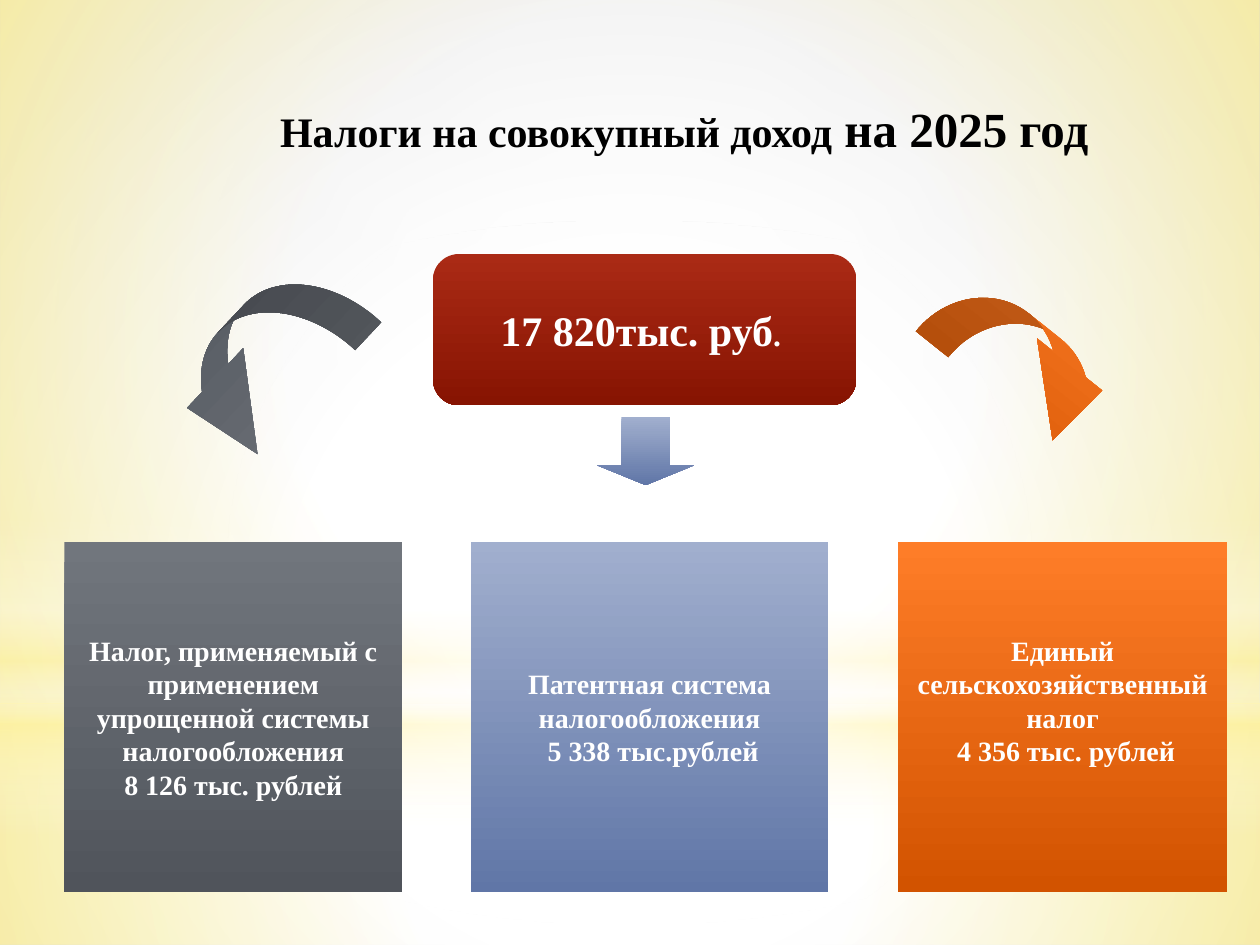
"""Build a slide that splits the total income tax into three special tax regimes."""
from dataclasses import dataclass
from typing import Optional

from lxml import etree
from pptx import Presentation
from pptx import util as u
from pptx.dml.color import RGBColor
from pptx.enum import shapes, text
from pptx.oxml.ns import qn

FONT = "Times New Roman"
WHITE = "FFFFFF"
YELLOW = "FFF39D"
WIDTH, HEIGHT = 720, 540
BOX_TOP, BOX_HEIGHT = 309.6, 200.2
CENTER = (50, 50, 50, 50)
Shape = shapes.MSO_SHAPE


@dataclass(frozen=True)
class Gradient:
    """Colour stops as (position, colour, opacity) in percent, circular if focus is set."""
    stops: tuple
    focus: Optional[tuple] = None


@dataclass(frozen=True)
class Block:
    """A filled preset shape, placed in points."""
    kind: Shape
    left: float
    top: float
    width: float
    height: float
    fill: Gradient
    rotation: float = 0
    adjustments: tuple = ()


@dataclass(frozen=True)
class Regime:
    """A tax regime box with its name and amount."""
    left: float
    width: float
    fill: Gradient
    name: str
    amount: str
    bottom_inset: float = 0


def linear(top: str, bottom: str) -> Gradient:
    """Return an opaque top-to-bottom gradient."""
    return Gradient(((0, top, 100), (100, bottom, 100)))


GREY = linear("71767D", "50545B")
BLUE = linear("A1AFCE", "6076A7")
ORANGE = linear("FE7D28", "D25300")
RED = linear("AA2A15", "871402")
BACKGROUND = Gradient(((0, WHITE, 100), (42, WHITE, 100), (100, "D1D1D1", 100)), (24, 44, 24, 12))

GLOWS = (
    Block(Shape.RECTANGLE, 0, 401.8, WIDTH, 138.2,
          Gradient(((0, WHITE, 91), (37, WHITE, 76), (100, YELLOW, 79)), CENTER)),
    Block(Shape.RECTANGLE, 0, 0, WIDTH, 401.8,
          Gradient(((0, WHITE, 89), (48, WHITE, 62), (100, YELLOW, 79)), CENTER)),
    Block(Shape.RECTANGLE, 0, 296.6, WIDTH, 180,
          Gradient(((0, WHITE, 0), (29, WHITE, 30), (45, YELLOW, 40),
                    (55, WHITE, 26), (65, YELLOW, 60), (100, WHITE, 0)))),
    Block(Shape.OVAL, 0, 126, WIDTH, 401.8,
          Gradient(((0, WHITE, 100), (56, WHITE, 0)), CENTER)),
)
TOTAL = Block(Shape.ROUNDED_RECTANGLE, 247.5, 145.2, 241.8, 86.4, RED, 0, (0.17,))
REGIMES = (
    Regime(36.8, 193, GREY,
           "Налог, применяемый с применением упрощенной системы налогообложения",
           "8 126 тыс. рублей"),
    Regime(269.3, 203.8, BLUE, "Патентная система налогообложения", " 5 338 тыс.рублей"),
    Regime(513.2, 188, ORANGE, "Единый сельскохозяйственный налог", " 4 356 тыс. рублей", 19),
)
ARROWS = (
    Block(Shape.CURVED_UP_ARROW, 87.8, 176.4, 126.7, 64.1, GREY, 133.2, (0.34, 0.73, 0.74)),
    Block(Shape.CURVED_DOWN_ARROW, 524.9, 185, 123.8, 48.2, ORANGE, 38.6, (0.49, 0.99, 0.83)),
    Block(Shape.DOWN_ARROW, 341.3, 238.3, 55.4, 38.9, BLUE, 0, (0.5, 0.29)),
)


def color(value: str) -> RGBColor:
    """Turn a hex string into a colour."""
    return RGBColor.from_string(value)


def apply_gradient(owner, fill, gradient: Gradient) -> None:
    """Fill a shape or the slide background with a gradient."""
    fill.solid()
    solid = next(owner.element.iter(qn("a:solidFill")))
    grad = etree.Element(qn("a:gradFill"), rotWithShape="1")
    stop_list = etree.SubElement(grad, qn("a:gsLst"))
    for position, value, opacity in gradient.stops:
        stop = etree.SubElement(stop_list, qn("a:gs"), pos=str(position * 1000))
        shade = etree.SubElement(stop, qn("a:srgbClr"), val=value)
        if opacity < 100:
            etree.SubElement(shade, qn("a:alpha"), val=str(opacity * 1000))
    if gradient.focus:
        circle = etree.SubElement(grad, qn("a:path"), path="circle")
        sides = {side: str(part * 1000) for side, part in zip("ltrb", gradient.focus)}
        etree.SubElement(circle, qn("a:fillToRect"), **sides)
    else:
        etree.SubElement(grad, qn("a:lin"), ang="5400000", scaled="0")
    solid.getparent().replace(solid, grad)


def draw_block(slide, block: Block):
    """Draw a preset shape without outline or shadow."""
    shape = slide.shapes.add_shape(block.kind, u.Pt(block.left), u.Pt(block.top),
                                   u.Pt(block.width), u.Pt(block.height))
    for index, value in enumerate(block.adjustments):
        shape.adjustments[index] = value
    shape.rotation = block.rotation
    shape.shadow.inherit = False
    apply_gradient(shape, shape.fill, block.fill)
    shape.line.fill.background()
    return shape


def write_text(shape, paragraphs: tuple, *, font_color: str = WHITE,
               anchor=text.MSO_ANCHOR.MIDDLE, insets: tuple = (0, 0, 0, 0)) -> None:
    """Write centred bold paragraphs, each a tuple of (wording, size) runs."""
    frame = shape.text_frame
    frame.word_wrap = True
    frame.vertical_anchor = anchor
    (frame.margin_left, frame.margin_top,
     frame.margin_right, frame.margin_bottom) = (u.Pt(inset) for inset in insets)
    for index, runs in enumerate(paragraphs):
        paragraph = frame.add_paragraph() if index else frame.paragraphs[0]
        paragraph.alignment = text.PP_ALIGN.CENTER
        for wording, size in runs:
            run = paragraph.add_run()
            run.text = wording
            run.font.name = FONT
            run.font.size = u.Pt(size)
            run.font.bold = True
            run.font.color.rgb = color(font_color)


def draw_regime(slide, regime: Regime) -> None:
    """Draw a tax regime box."""
    shape = draw_block(slide, Block(Shape.RECTANGLE, regime.left, BOX_TOP,
                                    regime.width, BOX_HEIGHT, regime.fill))
    write_text(shape, (((regime.name, 16),), ((regime.amount, 16),)),
               insets=(8.6, 0, 8.6, regime.bottom_inset))


def main() -> None:
    """Build and save the presentation."""
    presentation = Presentation()
    presentation.slide_width, presentation.slide_height = u.Pt(WIDTH), u.Pt(HEIGHT)
    slide = presentation.slides.add_slide(presentation.slide_layouts[6])
    apply_gradient(slide, slide.background.fill, BACKGROUND)
    for glow in GLOWS:
        draw_block(slide, glow)
    title = slide.shapes.add_textbox(u.Pt(59.8), u.Pt(49), u.Pt(652.3), u.Pt(70.6))
    write_text(title, ((("Налоги на совокупный доход", 24), (" на 2025 год", 28)),),
               font_color="000000", anchor=text.MSO_ANCHOR.TOP, insets=(17, 7, 7, 4))
    write_text(draw_block(slide, TOTAL), ((("17 820тыс. руб", 24), (". ", 18)),),
               insets=(10, 3.6, 10, 3.6))
    for regime in REGIMES:
        draw_regime(slide, regime)
    for arrow in ARROWS:
        draw_block(slide, arrow)
    presentation.save("out.pptx")


if __name__ == "__main__":
    main()
